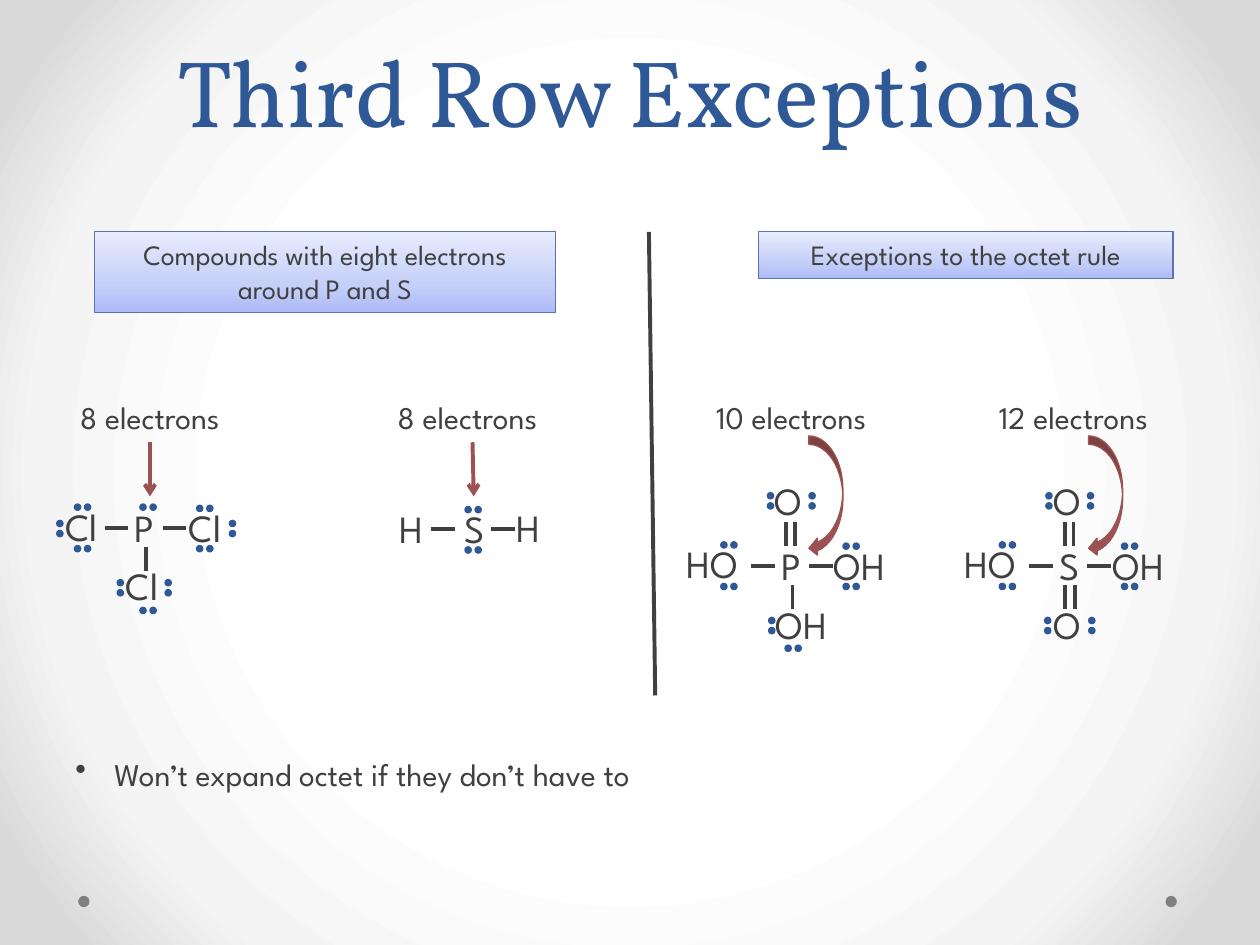
"""Build the slide on third row exceptions to the octet rule."""
from dataclasses import dataclass

from pptx import Presentation
from pptx.dml.color import RGBColor
from pptx.enum.shapes import MSO_CONNECTOR as Line, MSO_SHAPE as Shape
from pptx.enum.text import MSO_ANCHOR as Anchor, MSO_AUTO_SIZE as Auto, PP_ALIGN as Align
from pptx.oxml import parse_xml
from pptx.oxml.ns import nsdecls, qn
from pptx.oxml.xmlchemy import OxmlElement
from pptx.util import Inches, Pt


@dataclass(frozen=True)
class Theme:
    """Colours, fonts and type sizes."""
    ink: str = "404040"
    blue: str = "2F5897"
    red: str = "9C5252"
    grey: str = "808080"
    border: str = "5C72B2"
    box: tuple = ((0, "ADBBF6"), (35, "C5CFF8"), (100, "E8ECFD"))
    back: tuple = ((50, "FFFFFF"), (76, "F4F4F4"), (92, "DADADA"))
    head: str = "Vollkorn"
    body: str = "League Spartan"
    title: int = 54
    text: int = 18
    caption: int = 16
    atom: int = 22
    thin: float = 0.75
    thick: float = 2.25


T = Theme()
COLS, ROWS = 1000, 750
CELL = Inches(10) // COLS
DOT, GAP, BOND = 5, 8, 19
ATOM_W = {"P": 45, "S": 45, "H": 45, "O": 47, "Cl": 51, "OH": 68, "HO": 68}
ATOM_H, LABEL_W, LABEL_TOP = 47, 174, 311

TITLE = "Third Row Exceptions"
NOTE = "Won’t expand octet if they don’t have to"
CAPTIONS = [
    ("Compounds with eight electrons around P and S", 75, 366, 64),
    ("Exceptions to the octet rule", 602, 329, 37),
]
LABELS = [("8 electrons", 32), ("8 electrons", 284), ("10 electrons", 541), ("12 electrons", 765)]
STRAIGHT_ARROWS = [(119, 119), (375, 376)]
CURVED_ARROWS = [642, 864]
FOOTER_DOTS = [62, 925]

SIDE_BONDS = [(-14, 24), (32, 24)]
ACID = dict(
    atoms=[("O", -5, -51), ("HO", -75, -1), ("OH", 42, 0)],
    across=SIDE_BONDS,
    down=[(14, -11), (21, -11)],
    flat=[(59, 6), (59, 38), (-38, 38), (-38, 5)],
    upright=[(-1, -34), (32, -34)],
)
MOLECULES = [
    ((359, 396), [dict(
        atoms=[("S", 0, 0), ("H", -52, 0), ("H", 41, -1)],
        across=[(-17, 24), (31, 24)],
        flat=[(10, 6), (10, 38)],
    )]),
    ((97, 395), [dict(
        atoms=[("P", 0, 0), ("Cl", -7, 46), ("Cl", -55, -1), ("Cl", 43, 0)],
        across=SIDE_BONDS,
        down=[(19, 39)],
        flat=[(59, 6), (59, 38), (14, 5), (14, 87), (-38, 38), (-38, 5)],
        upright=[(34, 65), (-4, 65), (-52, 18), (85, 18)],
    )]),
    ((610, 425), [ACID, dict(
        atoms=[("P", 0, 0), ("OH", -4, 47)],
        down=[(19, 39)],
        flat=[(13, 87)],
        upright=[(0, 65)],
    )]),
    ((831, 425), [ACID, dict(
        atoms=[("S", 0, 0), ("O", -5, 47)],
        down=[(14, 39), (22, 39)],
        upright=[(-2, 65), (33, 65)],
    )]),
]


def cells(*values):
    return [v * CELL for v in values]


def rgb(color):
    return RGBColor.from_string(color)


def set_gradient(parent, stops, shade):
    old = parent.find(qn("a:solidFill"))
    gs = "".join(f'<a:gs pos="{pos * 1000}"><a:srgbClr val="{c}"/></a:gs>' for pos, c in stops)
    new = parse_xml(f'<a:gradFill {nsdecls("a")} rotWithShape="1"><a:gsLst>{gs}</a:gsLst>{shade}</a:gradFill>')
    parent.replace(old, new)


def write(sp, text, size=T.text, font=T.body, color=T.ink, align=Align.LEFT,
          anchor=Anchor.TOP, wrap=True, grow=True, leading=None):
    tf = sp.text_frame
    tf.word_wrap = wrap
    tf.vertical_anchor = anchor
    tf.auto_size = Auto.SHAPE_TO_FIT_TEXT if grow else Auto.NONE
    p = tf.paragraphs[0]
    p.alignment = align
    if leading:
        p.line_spacing = Pt(leading)
    r = p.add_run()
    r.text = text
    r.font.size, r.font.name = Pt(size), font
    r.font.color.rgb = rgb(color)
    return p


def add_text(shapes, text, box, **fmt):
    return write(shapes.add_textbox(*cells(*box)), text, **fmt)


def add_solid(shapes, kind, box, fill, line=None):
    sp = shapes.add_shape(kind, *cells(*box))
    sp.shadow.inherit = False
    sp.fill.solid()
    sp.fill.fore_color.rgb = rgb(fill)
    if line:
        sp.line.color.rgb = rgb(line)
        sp.line.width = Pt(T.thin)
    else:
        sp.line.fill.background()
    return sp


def add_line(shapes, x1, y1, x2, y2, color=T.ink, arrow=False):
    ln = shapes.add_connector(Line.STRAIGHT, *cells(x1, y1, x2, y2))
    ln.line.color.rgb = rgb(color)
    ln.line.width = Pt(T.thick)
    if arrow:
        tail = OxmlElement("a:tailEnd")
        tail.set("type", "arrow")
        ln.line._get_or_add_ln().append(tail)
    ln._element.spPr.append(OxmlElement("a:effectLst"))


def add_molecule(shapes, origin, parts):
    ox, oy = origin
    for part in parts:
        for text, x, y in part["atoms"]:
            add_text(shapes, text, (ox + x, oy + y, ATOM_W[text], ATOM_H),
                     size=T.atom, wrap=len(text) == 1)
        for key, dx, dy in (("across", BOND, 0), ("down", 0, BOND)):
            for x, y in part.get(key, []):
                add_line(shapes, ox + x, oy + y, ox + x + dx, oy + y + dy)
        for key, dx, dy in (("flat", GAP, 0), ("upright", 0, GAP)):
            for x, y in part.get(key, []):
                for i in range(2):
                    add_solid(shapes, Shape.OVAL, (ox + x + i * dx, oy + y + i * dy, DOT, DOT),
                              T.blue, T.blue)


def main():
    prs = Presentation()
    prs.slide_width, prs.slide_height = cells(COLS, ROWS)
    s = prs.slides.add_slide(prs.slide_layouts[6])
    shapes = s.shapes
    s.background.fill.solid()
    set_gradient(s.element.find(".//" + qn("p:bgPr")), T.back,
                 '<a:path path="circle"><a:fillToRect l="50000" t="50000" r="50000" b="50000"/></a:path>')

    for x in FOOTER_DOTS:
        add_solid(shapes, Shape.OVAL, (x, 711, 9, 9), T.grey)
    add_text(shapes, TITLE, (50, 0, 900, 121), size=T.title, font=T.head, color=T.blue,
             align=Align.CENTER, anchor=Anchor.BOTTOM, grow=False, leading=58)

    pPr = add_text(shapes, NOTE, (50, 594, 684, 40))._p.get_or_add_pPr()
    indent = 31 * CELL
    pPr.set("marL", str(indent))
    pPr.set("indent", str(-indent))
    bullet = OxmlElement("a:buChar")
    bullet.set("char", "•")
    pPr.append(bullet)

    for text, x, w, h in CAPTIONS:
        sp = add_solid(shapes, Shape.RECTANGLE, (x, 184, w, h), T.box[0][1], T.border)
        set_gradient(sp._element.spPr, T.box, '<a:lin ang="16200000" scaled="0"/>')
        write(sp, text, size=T.caption, align=Align.CENTER)
    add_line(shapes, 515, 184, 520, 552)

    for origin, parts in MOLECULES:
        add_molecule(shapes.add_group_shape().shapes, origin, parts)
    for text, x in LABELS:
        add_text(shapes, text, (x, LABEL_TOP, LABEL_W, 40), align=Align.CENTER)
    for x1, x2 in STRAIGHT_ARROWS:
        add_line(shapes, x1, 351, x2, 394, color=T.red, arrow=True)
    for x in CURVED_ARROWS:
        add_solid(shapes, Shape.CURVED_LEFT_ARROW, (x, 346, 27, 96), T.red, T.red)
    prs.save("out.pptx")


if __name__ == "__main__":
    main()
